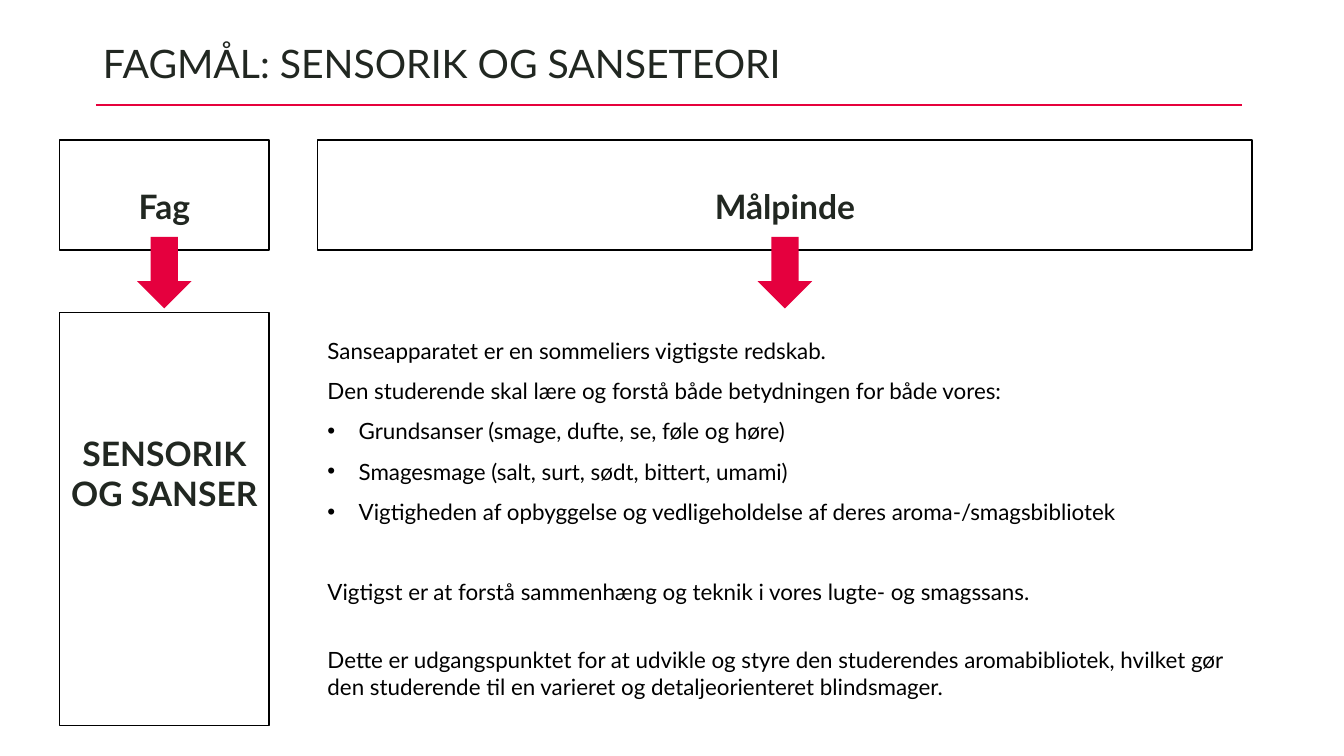
import pptx
import pptx.util
from lxml import etree
from pptx.dml.color import RGBColor
from pptx.enum.shapes import MSO_CONNECTOR, MSO_SHAPE
from pptx.enum.text import MSO_ANCHOR, MSO_AUTO_SIZE, PP_ALIGN
from pptx.oxml.ns import qn

Inches, Pt = pptx.util.Inches, pptx.util.Pt

WHITE = RGBColor(0xFF, 0xFF, 0xFF)
BLACK = RGBColor(0, 0, 0)
INK = RGBColor(0x21, 0x27, 0x21)
RULE_RED = RGBColor(0xE6, 0x01, 0x3C)
ARROW_RED = RGBColor(0xE5, 0x00, 0x3E)

# Grid: (start, length) in inches
SUBJECT_COL, GOALS_COL = (0.59, 2.08), (3.15, 9.27)
HEAD_ROW, ARROW_ROW, BODY_ROW = (1.39, 1.09), (2.35, 0.71), (3.1, 4.1)
ARROW_WIDTH = 0.54
BULLET_INDENT = 0.31

TITLE_FONT = {"name": "Lato", "size": Pt(28), "bold": False}
HEAD_FONT = {"name": "Lato", "size": Pt(24), "bold": True}
BODY_FONT = {"name": "Lato", "size": Pt(16), "bold": False}
BODY_LINE = {"line_spacing": 1.5}
AFTER_GAP = {"space_before": Pt(28.8)}

GOALS = [
    ("Sanseapparatet er en sommeliers vigtigste redskab.", False, BODY_LINE),
    ("Den studerende skal lære og forstå både betydningen for både vores:", False, BODY_LINE),
    ("Grundsanser (smage, dufte, se, føle og høre)", True, BODY_LINE),
    ("Smagesmage (salt, surt, sødt, bittert, umami)", True, BODY_LINE),
    ("Vigtigheden af opbyggelse og vedligeholdelse af deres aroma-/smagsbibliotek", True, BODY_LINE),
    ("Vigtigst er at forstå sammenhæng og teknik i vores lugte- og smagssans.", False,
     {**BODY_LINE, **AFTER_GAP}),
    ("Dette er udgangspunktet for at udvikle og styre den studerendes aromabibliotek, "
     "hvilket gør den studerende til en varieret og detaljeorienteret blindsmager.", False,
     {"line_spacing": 1.0, **AFTER_GAP}),
]


def apply(target, formats):
    for name, value in formats.items():
        setattr(target, name, value)


def area(col, row):
    """Left, top, width and height of a grid cell."""
    return [Inches(v) for v in (col[0], row[0], col[1], row[1])]


def write(p, text, font, color, formats):
    r = p.add_run()
    r.text = text
    apply(p, formats)
    apply(r.font, font)
    r.font.color.rgb = color


def add_title(s, text):
    title = s.shapes.title
    apply(title, dict(zip(("left", "top", "width", "height"), area((0.92, 11.5), (0.3, 0.7)))))
    tf = title.text_frame
    apply(tf, {"vertical_anchor": MSO_ANCHOR.MIDDLE, "word_wrap": True,
               "auto_size": MSO_AUTO_SIZE.NONE})
    write(tf.paragraphs[0], text, TITLE_FONT, INK,
          {"alignment": PP_ALIGN.LEFT, "line_spacing": 0.9})


def add_rule(s):
    line = s.shapes.add_connector(MSO_CONNECTOR.STRAIGHT, Inches(0.95), Inches(1.04),
                                  Inches(12.32), Inches(1.04))
    line.line.color.rgb = RULE_RED
    line.line.width = Pt(1.5)
    etree.SubElement(line._element.spPr, qn("a:effectLst"))


def add_box(s, col, row, text, spacing, top_inset=0.05):
    box = s.shapes.add_shape(MSO_SHAPE.RECTANGLE, *area(col, row))
    box.shadow.inherit = False
    box.fill.background()
    box.line.color.rgb = BLACK
    box.line.width = Pt(1)
    tf = box.text_frame
    apply(tf, {"vertical_anchor": MSO_ANCHOR.TOP, "word_wrap": True,
               "margin_top": Inches(top_inset)})
    write(tf.paragraphs[0], text, HEAD_FONT, INK,
          {"alignment": PP_ALIGN.CENTER, "line_spacing": spacing})


def add_down_arrow(s, col):
    """Arrow centred on a column, from the head row to the body row."""
    left = col[0] + (col[1] - ARROW_WIDTH) / 2
    arrow = s.shapes.add_shape(MSO_SHAPE.DOWN_ARROW, *area((left, ARROW_WIDTH), ARROW_ROW))
    arrow.shadow.inherit = False
    arrow.fill.solid()
    arrow.fill.fore_color.rgb = ARROW_RED
    arrow.line.fill.background()


def add_bullet(p):
    pPr = p._p.get_or_add_pPr()
    pPr.set("marL", str(Inches(BULLET_INDENT)))
    pPr.set("indent", str(-Inches(BULLET_INDENT)))
    etree.SubElement(pPr, qn("a:buFont"), typeface="Arial")
    etree.SubElement(pPr, qn("a:buChar"), char="•")


def add_goals(s):
    tf = s.shapes.add_textbox(*area((GOALS_COL[0], 9.46), (3.16, 4.04))).text_frame
    tf.word_wrap = True
    for i, (text, bulleted, formats) in enumerate(GOALS):
        p = tf.add_paragraph() if i else tf.paragraphs[0]
        if bulleted:
            add_bullet(p)
        write(p, text, BODY_FONT, BLACK, formats)


def main():
    prs = pptx.Presentation()
    prs.slide_width, prs.slide_height = Inches(13.33), Inches(7.5)
    s = prs.slides.add_slide(prs.slide_layouts.get_by_name("Title Only"))
    s.background.fill.solid()
    s.background.fill.fore_color.rgb = WHITE
    add_rule(s)
    add_title(s, "FAGMÅL: SENSORIK OG SANSETEORI")
    add_box(s, SUBJECT_COL, BODY_ROW, "SENSORIK OG SANSER", 1.0, top_inset=1.19)
    add_goals(s)
    for col, heading in ((SUBJECT_COL, "Fag"), (GOALS_COL, "Målpinde")):
        add_box(s, col, HEAD_ROW, heading, 2.0)
        add_down_arrow(s, col)
    prs.save("out.pptx")


if __name__ == "__main__":
    main()
